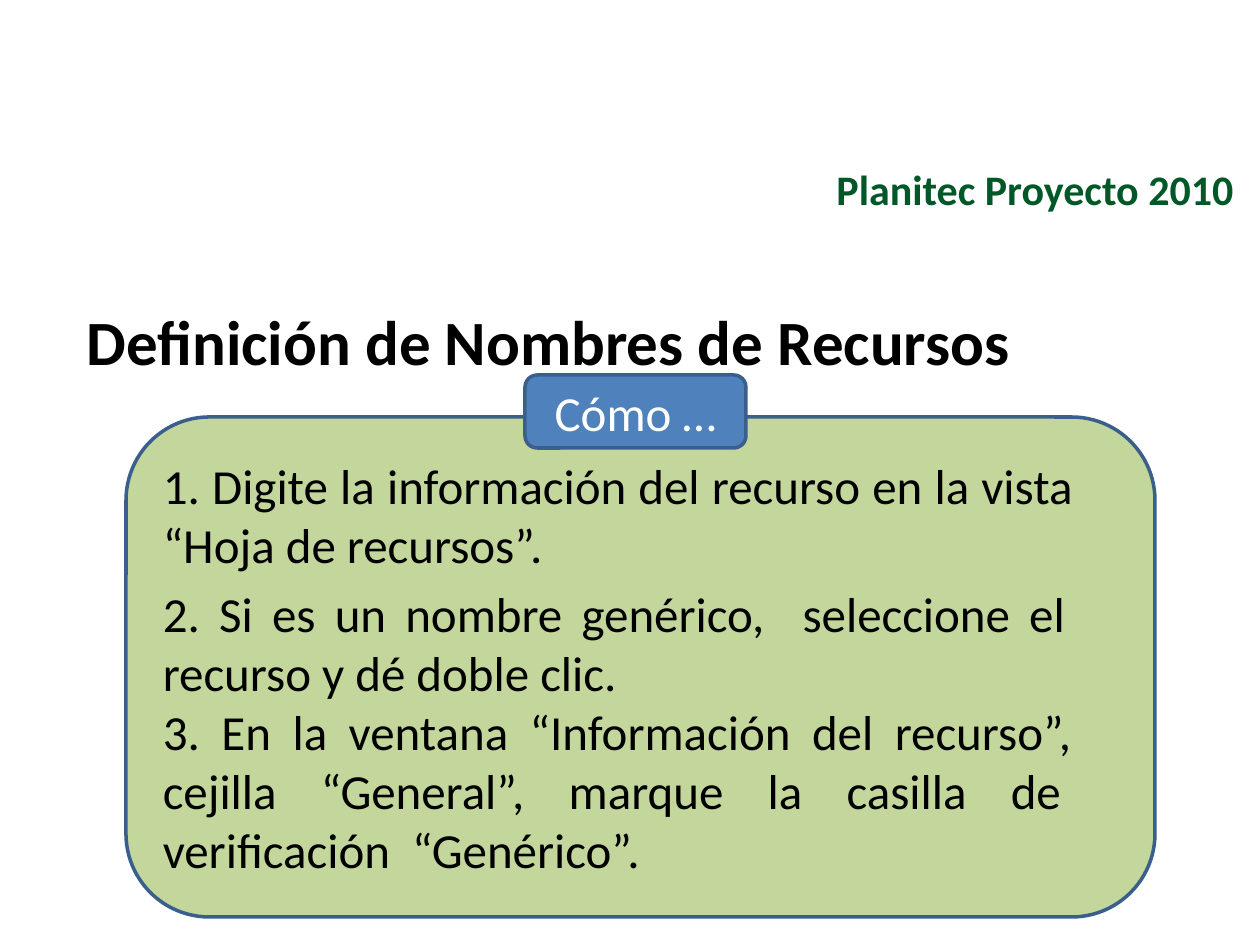
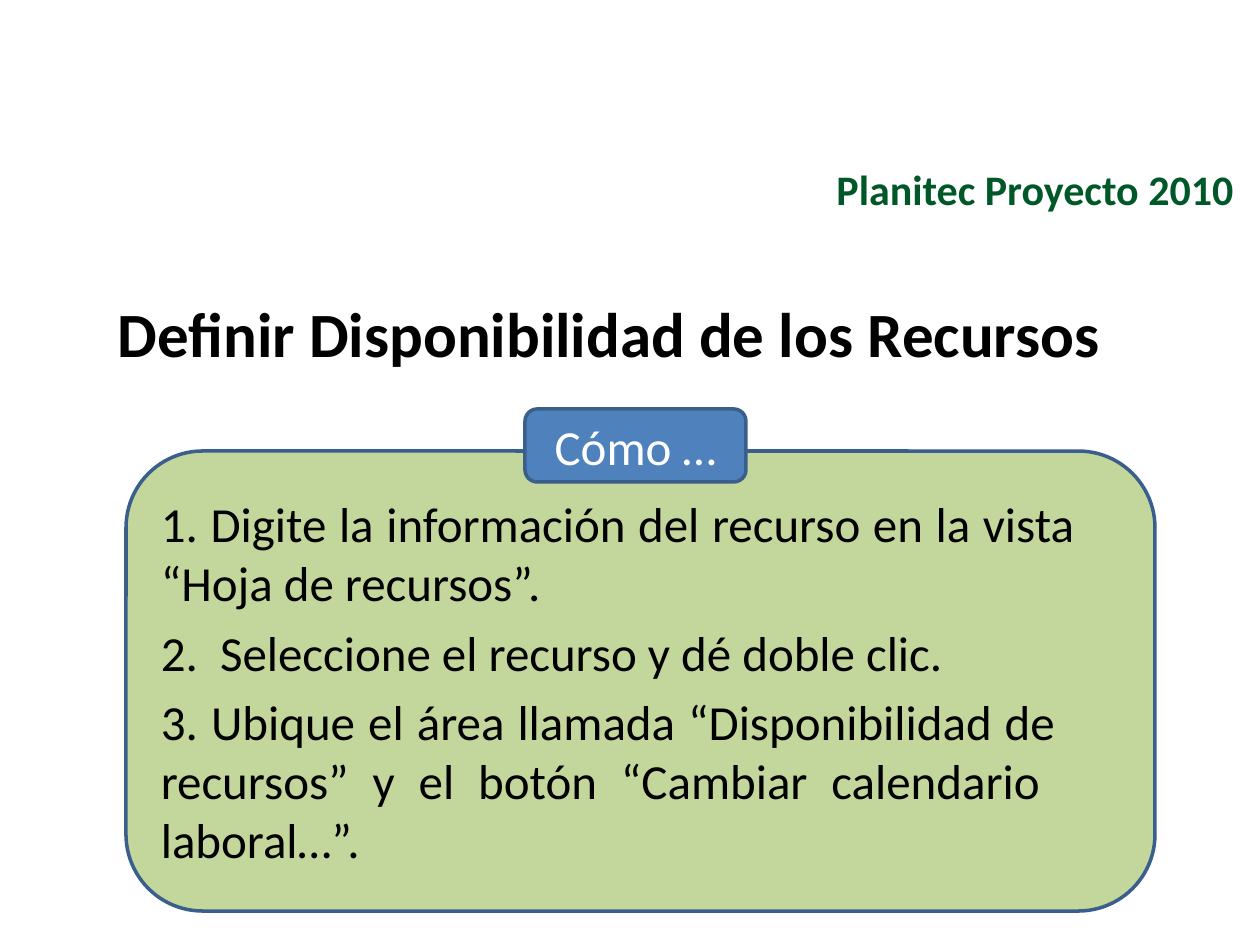
"""Builds two how-to slides about resources in a planning program."""
from pptx import Presentation
from pptx.dml.color import RGBColor
from pptx.enum.shapes import MSO_SHAPE
from pptx.enum.text import MSO_ANCHOR, PP_ALIGN
from pptx.util import Pt

SCALE = 9144000 / 1260
FONT = "Calibri"
GREEN = RGBColor(0x00, 0x58, 0x28)
BLACK = RGBColor(0x00, 0x00, 0x00)
WHITE = RGBColor(0xFF, 0xFF, 0xFF)
PANEL_FILL = RGBColor(0xC3, 0xD6, 0x9B)
LABEL_FILL = RGBColor(0x4F, 0x81, 0xBD)
OUTLINE = RGBColor(0x3A, 0x5F, 0x8C)


def px(*lengths):
    return [round(length * SCALE) for length in lengths]


def write(box, lines, size, color, align, bold=False):
    frame = box.text_frame
    frame.word_wrap = True
    frame.text = "\n".join(lines)
    for para in frame.paragraphs:
        para.alignment = align
        for span in para.runs:
            span.font.name = FONT
            span.font.size = Pt(size)
            span.font.bold = bold
            span.font.color.rgb = color


SLIDES = [
    {
        "title": "Definición de Nombres de Recursos",
        "title_at": (74, 296),
        "panel_top": 417,
        "panel_height": 500,
        "space_after": 0,
        "steps": [
            "1. Digite la información del recurso en la vista \t“Hoja de recursos”.",
            "2. Si es un nombre genérico,  seleccione el \trecurso y dé doble clic.",
            "3. En la ventana “Información del recurso”, \tcejilla “General”, "
            "marque la casilla de \tverificación  “Genérico”.",
        ],
    },
    {
        "title": "Definir Disponibilidad de los Recursos",
        "title_at": (105, 288),
        "panel_top": 451,
        "panel_height": 460,
        "space_after": 6,
        "steps": [
            "1. Digite la información del recurso en la vista \t“Hoja de recursos”.",
            "2.  Seleccione el recurso y dé doble clic.",
            "3. Ubique el área llamada “Disponibilidad de \trecursos” y el botón "
            "“Cambiar calendario \tlaboral…”.",
        ],
    },
]

deck = Presentation()
deck.slide_width, deck.slide_height = px(1260, 945)

for content in SLIDES:
    page = deck.slides.add_slide(deck.slide_layouts[5])

    header = page.shapes.add_textbox(*px(679, 145, 567, 87))
    header.text_frame.vertical_anchor = MSO_ANCHOR.MIDDLE
    write(header, ["Planitec Proyecto 2010"], 24, GREEN, PP_ALIGN.RIGHT, bold=True)

    title = page.shapes.title
    left, top = content["title_at"]
    title.left, title.top, title.width, title.height = px(left, top, 1189 - left, 90)
    title.text_frame.vertical_anchor = MSO_ANCHOR.TOP
    write(title, [content["title"]], 36, BLACK, PP_ALIGN.LEFT, bold=True)

    panel_top = content["panel_top"]
    panel_place = (126, panel_top, 1029, content["panel_height"])
    label_place = (525, panel_top - 42, 221, 73)
    for place, fill, lines, color, align in (
        (panel_place, PANEL_FILL, content["steps"], BLACK, PP_ALIGN.JUSTIFY),
        (label_place, LABEL_FILL, ["Cómo …"], WHITE, PP_ALIGN.CENTER),
    ):
        box = page.shapes.add_shape(MSO_SHAPE.ROUNDED_RECTANGLE, *px(*place))
        box.shadow.inherit = False
        box.fill.solid()
        box.fill.fore_color.rgb = fill
        box.line.color.rgb = OUTLINE
        box.line.width = Pt(2)
        box.text_frame.vertical_anchor = MSO_ANCHOR.MIDDLE
        write(box, lines, 28, color, align)
        if len(lines) > 1:
            second_step = box.text_frame.paragraphs[1]
            second_step.space_before = Pt(6)
            second_step.space_after = Pt(content["space_after"])

deck.save("out.pptx")
